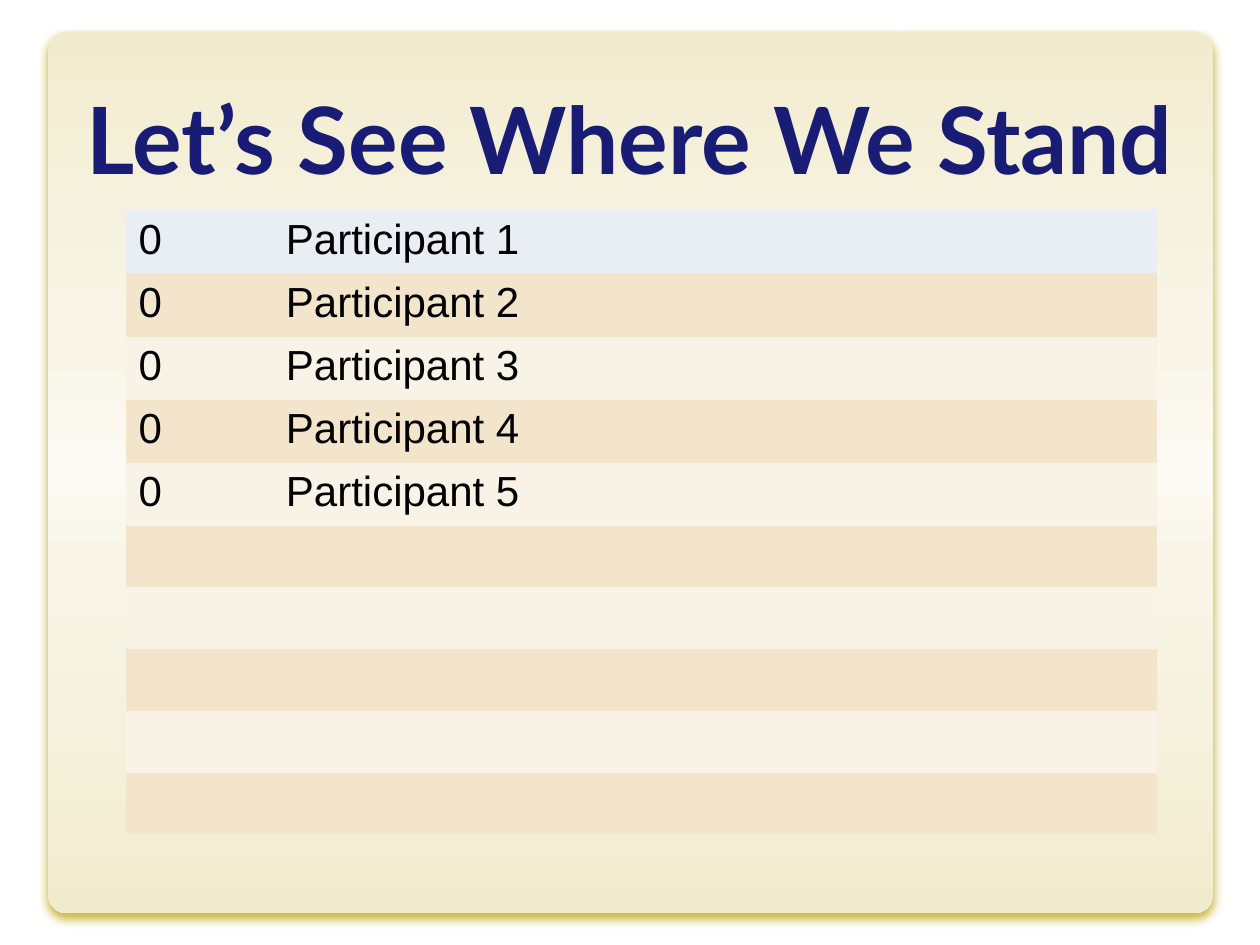
from lxml.etree import SubElement
from pptx import Presentation
from pptx.dml.color import RGBColor
from pptx.enum.shapes import MSO_SHAPE
from pptx.enum.text import MSO_ANCHOR, PP_ALIGN
from pptx.oxml.ns import qn
from pptx.util import Inches, Pt

COLORS = {
    "edge": "F1EBCE", "light": "F9F6E9", "middle": "FCFAF2",
    "shadow": "C5AF25", "title": "181C74", "text": "000000",
    "header": "E9EDF4", "dark_band": "F3E5CC", "light_band": "F9F3E7",
}
PANEL_STOPS = [(0, "edge"), (35, "light"), (50, "middle"), (60, "light"), (100, "edge")]
COLUMN_WIDTHS = [1.17, 2.92, 1.17, 2.92]
ROW_COUNT = 10
ROW_HEIGHT = 0.49
STANDINGS = [("0", f"Participant {n}") for n in range(1, 6)]
NO_STYLE = "{2D5ABB26-0587-4C30-8999-92F81FD0307C}"


def rgb(name):
    return RGBColor.from_string(COLORS[name])


def add_color(parent, name):
    return SubElement(parent, qn("a:srgbClr"), val=COLORS[name])


def style_run(r, font, size, color, bold=False):
    r.font.name = font
    r.font.size = Pt(size)
    r.font.bold = bold
    r.font.color.rgb = rgb(color)


def add_panel(s):
    sp = s.shapes.add_shape(MSO_SHAPE.ROUNDED_RECTANGLE, Inches(0.38), Inches(0.25),
                            Inches(9.25), Inches(7))
    sp.adjustments[0] = 0.022
    sp.line.fill.background()
    sp.shadow.inherit = False
    sp.fill.gradient()
    props = sp.fill._xPr
    grad = props.find(qn("a:gradFill"))
    for child in list(grad):
        grad.remove(child)
    stops = SubElement(grad, qn("a:gsLst"))
    for position, color in PANEL_STOPS:
        add_color(SubElement(stops, qn("a:gs"), pos=str(position * 1000)), color)
    SubElement(grad, qn("a:lin"), ang="5400000", scaled="0")
    shadow = SubElement(props.find(qn("a:effectLst")), qn("a:outerShdw"),
                        blurRad=str(Pt(5)), dist=str(Pt(3.6)), dir="5400000", rotWithShape="0")
    SubElement(add_color(shadow, "shadow"), qn("a:alpha"), val="90000")


def add_title(s, text):
    sp = s.shapes.add_textbox(Inches(0.5), Inches(0.33), Inches(9), Inches(1.25))
    tf = sp.text_frame
    tf.word_wrap = True
    tf.vertical_anchor = MSO_ANCHOR.BOTTOM
    tf.text = text
    p = tf.paragraphs[0]
    p.alignment = PP_ALIGN.CENTER
    style_run(p.runs[0], "Lato", 53, "title", bold=True)


def band_color(row):
    if row == 0:
        return "header"
    return "dark_band" if row % 2 else "light_band"


def add_standings(s):
    frame = s.shapes.add_table(ROW_COUNT, len(COLUMN_WIDTHS), Inches(1), Inches(1.67),
                               Inches(sum(COLUMN_WIDTHS)), Inches(ROW_COUNT * ROW_HEIGHT))
    table = frame.table
    table.first_row = False
    table.horz_banding = False
    table._tbl.tblPr.find(qn("a:tableStyleId")).text = NO_STYLE
    for column, width in zip(table.columns, COLUMN_WIDTHS):
        column.width = Inches(width)
    for i, row in enumerate(table.rows):
        row.height = Inches(ROW_HEIGHT)
        for cell in row.cells:
            cell.fill.solid()
            cell.fill.fore_color.rgb = rgb(band_color(i))
    for row, values in zip(table.rows, STANDINGS):
        for cell, value in zip(row.cells, values):
            cell.text_frame.text = value
            style_run(cell.text_frame.paragraphs[0].runs[0], "Arial", 24, "text")


def main():
    prs = Presentation()
    prs.slide_width = Inches(10)
    prs.slide_height = Inches(7.5)
    s = prs.slides.add_slide(prs.slide_layouts[6])
    add_panel(s)
    add_title(s, "Let’s See Where We Stand")
    add_standings(s)
    prs.save("out.pptx")


if __name__ == "__main__":
    main()
